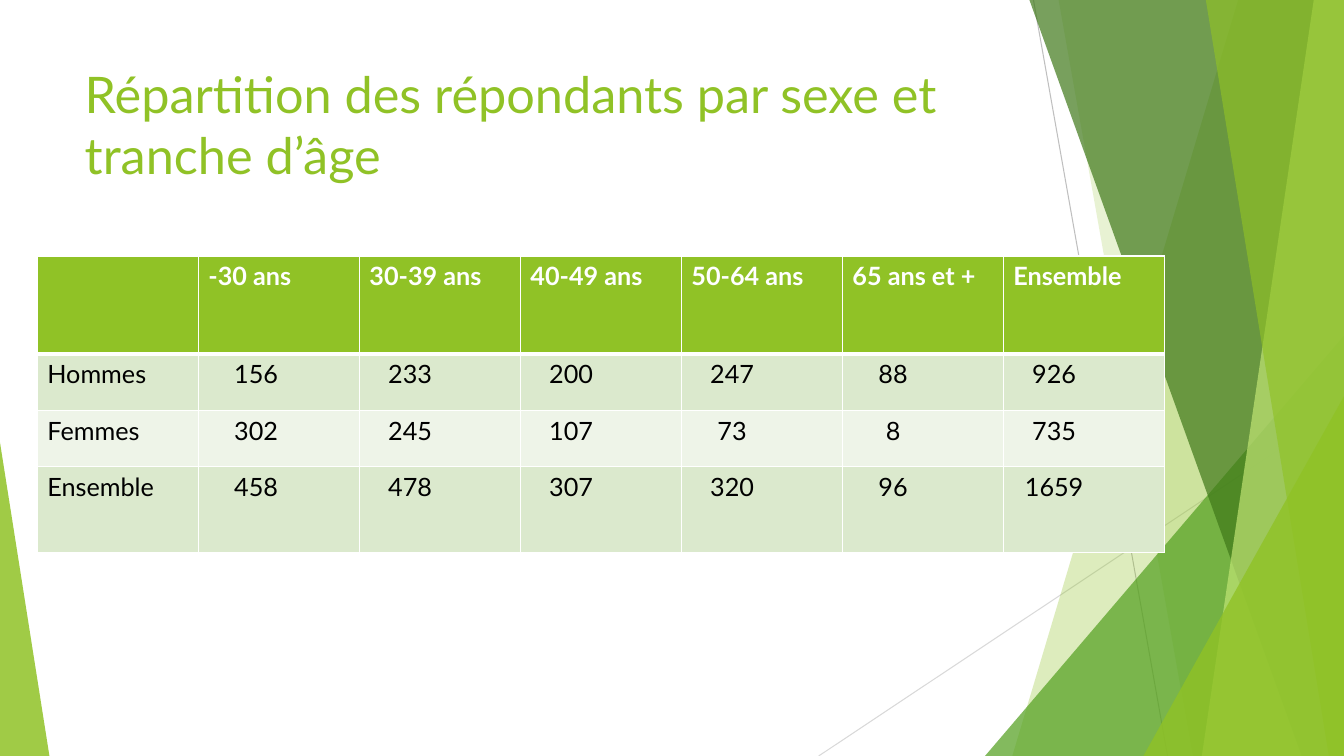
from collections import namedtuple

from lxml.etree import SubElement
from pptx import Presentation
from pptx.dml.color import RGBColor
from pptx.enum.shapes import MSO_CONNECTOR as Connector, MSO_SHAPE as Shape
from pptx.enum.text import MSO_ANCHOR as Anchor, PP_ALIGN as Align
from pptx.oxml.ns import qn
from pptx.util import Inches, Pt

Box = namedtuple("Box", "left top width height")
SLIDE = Box(0, 0, 13.33, 7.5)
RIBBONS = Box(8, 0, 5.33, 7.5)
CORNER = Box(0, 4.39, 0.49, 3.11)
TITLE = Box(0.74, 0.58, 9.4, 1.44)
TABLE = Box(0.37, 2.54, 11.18, 2.95)

FONT = "Lato"
GREEN, WHITE, BLACK = "90C226", "FFFFFF", "000000"
BANDS = ("DBE9CD", "EEF4E8")
ROW_HEIGHTS = (0.97, 0.56, 0.56, 0.85)
RESPONDENTS = (
    ("", "-30 ans", "30-39 ans", "40-49 ans", "50-64 ans", "65 ans et +", "Ensemble"),
    ("Hommes", "156", "233", "200", "247", "88", "926"),
    ("Femmes", "302", "245", "107", "73", "8", "735"),
    ("Ensemble", "458", "478", "307", "320", "96", "1659"),
)
HAIRLINES = (
    ((2.25, 0), (3.58, 7.5), "BFBFBF"),
    ((5.33, 4.03), (0.12, 7.5), "D9D9D9"),
)
FACETS = (
    ("band", 4.28, 2.04, GREEN, 30),
    ("band", 2.5, 3.83, GREEN, 20),
    ("peak", 1.77, 3.33, "54A021", 72),
    ("band", 2.21, 4.91, "3F7819", 70),
    ("band", 5.03, 3.92, "C0E474", 70),
    ("band", 3.96, 5.18, GREEN, 65),
    ("peak", 3.34, 3.93, GREEN, 80),
)


def color(value):
    """Turn a hex string into a colour."""
    return RGBColor.from_string(value)


def inches(values):
    """Convert several lengths to slide units."""
    return [Inches(value) for value in values]


def paint(shape, fill, opacity):
    """Give a shape a translucent fill without line or shadow."""
    shape.shadow.inherit = False
    shape.line.fill.background()
    shape.fill.solid()
    shape.fill.fore_color.rgb = color(fill)
    tint = shape.fill._xPr.find(qn("a:solidFill"))[0]
    SubElement(tint, qn("a:alpha"), val=str(opacity * 1000))


def add_peak(slide, box, apex, fill, opacity):
    """Add a triangle whose apex is at a share of its width."""
    shape = slide.shapes.add_shape(Shape.ISOSCELES_TRIANGLE, *inches(box))
    shape.adjustments[0] = apex
    paint(shape, fill, opacity)


def add_band(slide, box, top_x, bottom_x, fill, opacity):
    """Add a band with a slanted left edge that fills the box to its right."""
    right, bottom = box.left + box.width, box.top + box.height
    builder = slide.shapes.build_freeform(
        Inches(box.left + top_x), Inches(box.top), scale=1.0)
    corners = ((right, box.top), (right, bottom), (box.left + bottom_x, bottom))
    builder.add_line_segments([inches(corner) for corner in corners], close=True)
    paint(builder.convert_to_shape(), fill, opacity)


def add_ribbons(slide, box):
    """Draw the hairlines and green facets inside the box."""
    for (x1, y1), (x2, y2), stroke in HAIRLINES:
        line = slide.shapes.add_connector(Connector.STRAIGHT, *inches(
            (box.left + x1, box.top + y1, box.left + x2, box.top + y2)))
        line.line.color.rgb = color(stroke)
        line.line.width = Pt(0.75)
        SubElement(line._element.spPr, qn("a:effectLst"))
    for kind, first, second, fill, opacity in FACETS:
        if kind == "band":
            add_band(slide, box, first, second, fill, opacity)
        else:
            peak = Box(box.left + first, box.top + second,
                       box.width - first, box.height - second)
            add_peak(slide, peak, 1, fill, opacity)


def add_title(slide, box, text):
    """Place and format the title placeholder."""
    title = slide.shapes.title
    title.left, title.top, title.width, title.height = inches(box)
    frame = title.text_frame
    frame.text = text
    frame.word_wrap = True
    frame.vertical_anchor = Anchor.TOP
    paragraph = frame.paragraphs[0]
    paragraph.alignment = Align.LEFT
    font = paragraph.runs[0].font
    font.name, font.size = FONT, Pt(36)
    font.color.rgb = color(GREEN)


def set_borders(cell, top, bottom):
    """Draw white cell borders, with top and bottom widths in points."""
    properties = cell._tc.get_or_add_tcPr()
    widths = (("a:lnL", 1), ("a:lnR", 1), ("a:lnT", top), ("a:lnB", bottom))
    for position, (side, width) in enumerate(widths):
        border = SubElement(properties, qn(side), w=str(Pt(width)))
        fill = SubElement(border, qn("a:solidFill"))
        SubElement(fill, qn("a:srgbClr"), val=WHITE)
        properties.insert(position, border)


def fill_cell(cell, text, row, column):
    """Write and format one table cell."""
    header = row == 0
    cell.fill.solid()
    cell.fill.fore_color.rgb = color(GREEN if header else BANDS[(row - 1) % 2])
    set_borders(cell, 3 if row == 1 else 1, 3 if header else 1)
    cell.text = text
    paragraph = cell.text_frame.paragraphs[0]
    if not header and column:
        paragraph.alignment = Align.CENTER
        cell.margin_right = Inches(0.55 if column == 1 else 0.69)
    paragraph.font.size = Pt(18)
    for run in paragraph.runs:
        run.font.name, run.font.size, run.font.bold = FONT, Pt(18), header
        run.font.color.rgb = color(WHITE if header else BLACK)


def add_respondents(slide, box):
    """Add the table of respondents by sex and age."""
    columns = len(RESPONDENTS[0])
    table = slide.shapes.add_table(len(RESPONDENTS), columns, *inches(box)).table
    for column in table.columns:
        column.width = Inches(box.width / columns)
    for row, values in enumerate(RESPONDENTS):
        table.rows[row].height = Inches(ROW_HEIGHTS[row])
        for column, text in enumerate(values):
            fill_cell(table.cell(row, column), text, row, column)


def main():
    """Build and save the slide."""
    presentation = Presentation()
    presentation.slide_width, presentation.slide_height = inches(SLIDE[2:])
    slide = presentation.slides.add_slide(presentation.slide_layouts[5])
    add_ribbons(slide, RIBBONS)
    add_peak(slide, CORNER, 0, GREEN, 85)
    add_title(slide, TITLE, "Répartition des répondants par sexe et tranche d’âge")
    add_respondents(slide, TABLE)
    presentation.save("out.pptx")


if __name__ == "__main__":
    main()
